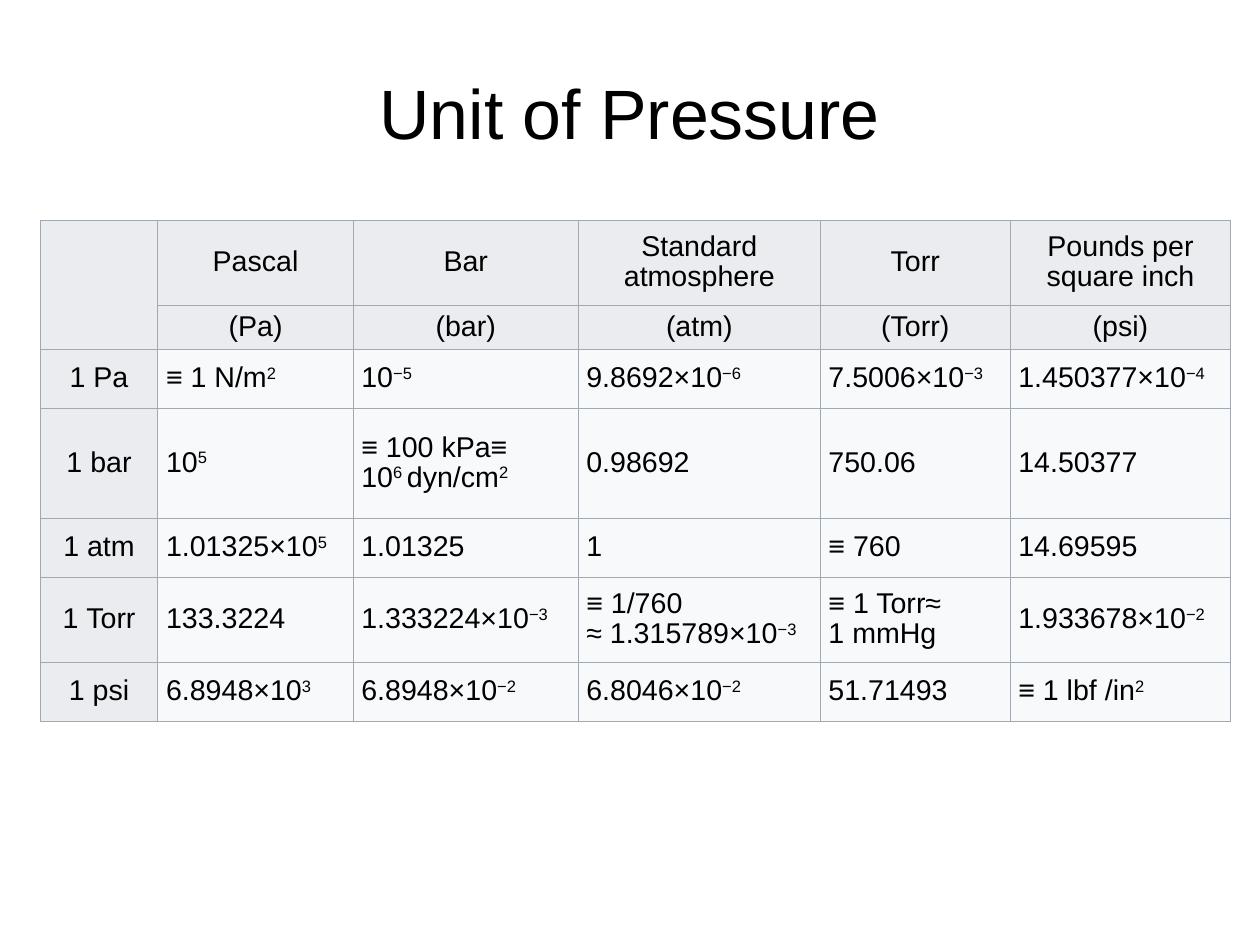
from dataclasses import dataclass

from lxml.etree import SubElement
from pptx import Presentation
from pptx.dml.color import RGBColor
from pptx.enum.text import MSO_ANCHOR as Anchor, PP_ALIGN as Align
from pptx.oxml.ns import qn
from pptx.util import Cm, Pt

COLORS = {
    "text": "000000",
    "header": "EAECF0",
    "value": "F8F9FA",
    "border": "A2A9B1",
}
FONT = "Arial"
LINE_SPACING = 0.93
NO_BREAK_SPACE = chr(160)
COLUMN_WIDTHS = [2.62, 4.34, 5.0, 5.38, 4.22, 4.9]


@dataclass
class UnitRow:
    height: float
    cells: list[str]
    is_header: bool = False


ROWS = [
    UnitRow(1.88, ["", "Pascal", "Bar", "Standard atmosphere", "Torr",
                   "Pounds per square inch"], True),
    UnitRow(0.74, ["", "(Pa)", "(bar)", "(atm)", "(Torr)", "(psi)"], True),
    UnitRow(1.32, ["1~Pa", "≡ 1~N/m^2^", "10^−5^", "9.8692×10^−6^",
                   "7.5006×10^−3^", "1.450377×10^−4^"]),
    UnitRow(2.44, ["1~bar", "10^5^", "≡ 100~kPa≡ 10^6~^dyn/cm^2^", "0.98692",
                   "750.06", "14.50377"]),
    UnitRow(1.32, ["1~atm", "1.01325×10^5^", "1.01325", "1", "≡~760", "14.69595"]),
    UnitRow(1.88, ["1~Torr", "133.3224", "1.333224×10^−3^",
                   "≡ 1/760 ≈~1.315789×10^−3^", "≡ 1 Torr≈ 1~mmHg",
                   "1.933678×10^−2^"]),
    UnitRow(1.32, ["1~psi", "6.8948×10^3^", "6.8948×10^−2^", "6.8046×10^−2^",
                   "51.71493", "≡ 1~lbf~/in^2^"]),
]


def style_font(font, size: float) -> None:
    font.name = FONT
    font.size = Pt(size)
    font.color.rgb = RGBColor.from_string(COLORS["text"])


def write_marked_text(paragraph, marked_text: str) -> None:
    parts = marked_text.replace("~", NO_BREAK_SPACE).split("^")
    for index, part in enumerate(parts):
        if part:
            run = paragraph.add_run()
            run.text = part
            style_font(run.font, 18)
            if index % 2:
                run.font._element.set("baseline", "30000")


def add_borders(cell) -> None:
    properties = cell._tc.get_or_add_tcPr()
    for side in ("a:lnL", "a:lnR", "a:lnT", "a:lnB"):
        line = SubElement(properties, qn(side), w=str(Pt(0.75)))
        fill = SubElement(line, qn("a:solidFill"))
        SubElement(fill, qn("a:srgbClr"), val=COLORS["border"])


def format_cell(cell, marked_text: str, is_header: bool) -> None:
    add_borders(cell)
    cell.fill.solid()
    color = COLORS["header" if is_header else "value"]
    cell.fill.fore_color.rgb = RGBColor.from_string(color)
    cell.vertical_anchor = Anchor.MIDDLE
    cell.margin_left = cell.margin_right = Cm(0.18)
    cell.margin_top = cell.margin_bottom = Cm(0.1)
    paragraph = cell.text_frame.paragraphs[0]
    paragraph.alignment = Align.CENTER if is_header else Align.LEFT
    paragraph.line_spacing = LINE_SPACING
    write_marked_text(paragraph, marked_text)


def add_title(slide) -> None:
    title = slide.shapes.title
    title.left, title.top = Cm(1.4), Cm(0.84)
    title.width, title.height = Cm(25.2), Cm(3.5)
    frame = title.text_frame
    frame.text = "Unit of Pressure"
    frame.vertical_anchor = Anchor.MIDDLE
    frame.margin_left = frame.margin_right = 0
    frame.margin_top = frame.margin_bottom = 0
    paragraph = frame.paragraphs[0]
    paragraph.alignment = Align.CENTER
    paragraph.line_spacing = LINE_SPACING
    style_font(paragraph.runs[0].font, 44)


def add_unit_table(slide) -> None:
    width = sum(COLUMN_WIDTHS)
    height = sum(row.height for row in ROWS)
    table = slide.shapes.add_table(
        len(ROWS), len(COLUMN_WIDTHS), Cm(0.89), Cm(4.9), Cm(width), Cm(height)
    ).table
    table.first_row = False
    table.horz_banding = False
    for column, column_width in zip(table.columns, COLUMN_WIDTHS):
        column.width = Cm(column_width)
    for row_index, row in enumerate(ROWS):
        table.rows[row_index].height = Cm(row.height)
        for column_index, marked_text in enumerate(row.cells):
            is_header = row.is_header or column_index == 0
            format_cell(table.cell(row_index, column_index), marked_text, is_header)
    table.cell(0, 0).merge(table.cell(1, 0))


def main() -> None:
    presentation = Presentation()
    presentation.slide_width, presentation.slide_height = Cm(28), Cm(21)
    slide = presentation.slides.add_slide(presentation.slide_layouts[5])
    add_title(slide)
    add_unit_table(slide)
    presentation.save("out.pptx")


if __name__ == "__main__":
    main()
